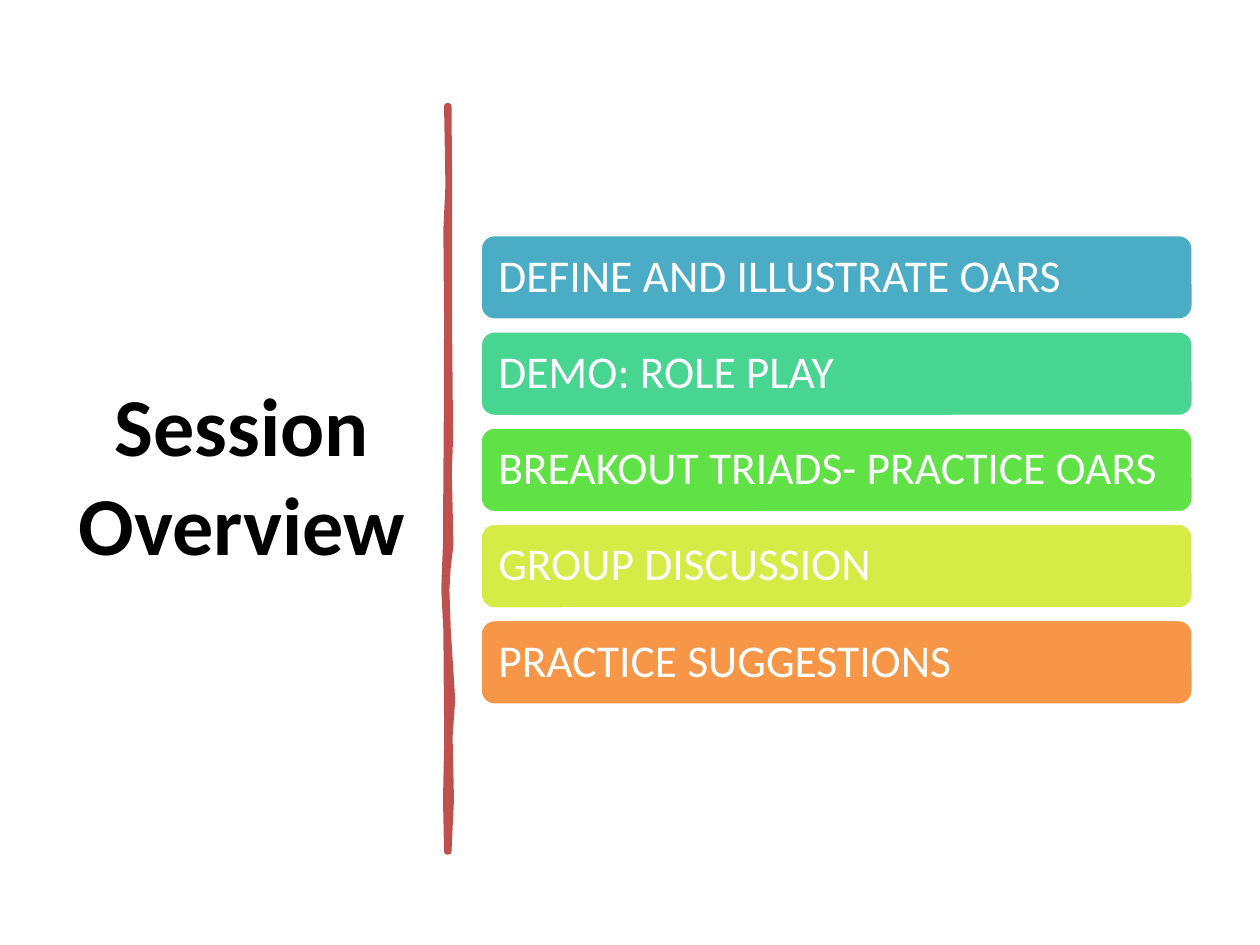
from lxml import etree
from pptx import Presentation
from pptx.dml.color import RGBColor
from pptx.enum import shapes, text
from pptx.oxml import ns
from pptx.util import Pt

FONT = "Calibri"
COLORS = {
    "title": "000000",
    "divider": "C0504D",
    "white": "FFFFFF",
    "blue": "4BACC6",
    "teal": "48D491",
    "green": "60E146",
    "lime": "D5EC46",
    "orange": "F79646",
}
AGENDA = [
    ("DEFINE AND ILLUSTRATE OARS", "blue"),
    ("DEMO: ROLE PLAY", "teal"),
    ("BREAKOUT TRIADS- PRACTICE OARS", "green"),
    ("GROUP DISCUSSION", "lime"),
    ("PRACTICE SUGGESTIONS", "orange"),
]
BAR_LEFT, BAR_TOP, BAR_WIDTH, BAR_HEIGHT, BAR_STEP = 274.4, 134, 407.5, 49, 55
DIVIDER_EDGES = [
    (60.5, 255.4, 256.4),
    (106, 256.2, 256.8),
    (131, 255, 256.8),
    (183, 255.4, 256.7),
    (250, 255.2, 257.3),
    (270, 255, 256.6),
    (311, 254.8, 257.5),
    (325, 254.2, 255.9),
    (337, 253.8, 255.2),
    (360, 255, 256),
    (400, 255.3, 258.5),
    (421, 255.5, 257),
    (457, 254.8, 257.8),
    (486.7, 255.4, 256.4),
]


def color(name):
    return RGBColor.from_string(COLORS[name])


def paint(shape, fill, line, width):
    shape.shadow.inherit = False
    shape.fill.solid()
    shape.fill.fore_color.rgb = color(fill)
    shape.line.color.rgb = color(line)
    shape.line.width = Pt(width)


def write(box, words, size, ink, align, bold=False):
    frame = box.text_frame
    frame.text = words
    frame.word_wrap = True
    frame.auto_size = text.MSO_AUTO_SIZE.NONE
    frame.vertical_anchor = text.MSO_ANCHOR.MIDDLE
    para = frame.paragraphs[0]
    para.alignment = align
    for span in para.runs:
        span.font.name = FONT
        span.font.size = Pt(size)
        span.font.bold = bold
        span.font.color.rgb = color(ink)
    return frame


def set_title(page, words):
    title = page.shapes.title
    title.left, title.top = Pt(37.4), Pt(50.4)
    title.width, title.height = Pt(201.6), Pt(440)
    write(title, words, 47, "title", text.PP_ALIGN.CENTER, bold=True)


def add_divider(page):
    right = [(Pt(x), Pt(y)) for y, _, x in DIVIDER_EDGES]
    left = [(Pt(x), Pt(y)) for y, x, _ in reversed(DIVIDER_EDGES)]
    builder = page.shapes.build_freeform(*right[0])
    builder.add_line_segments(right[1:] + left, close=True)
    divider = builder.convert_to_shape()
    paint(divider, "divider", "divider", 3.25)
    etree.SubElement(divider.line._get_or_add_ln(), ns.qn("a:round"))


def add_bar(page, row, words, fill):
    bar = page.shapes.add_shape(
        shapes.MSO_SHAPE.ROUNDED_RECTANGLE,
        Pt(BAR_LEFT), Pt(BAR_TOP + row * BAR_STEP), Pt(BAR_WIDTH), Pt(BAR_HEIGHT),
    )
    paint(bar, fill, "white", 2)
    frame = write(bar, words, 26, "white", text.PP_ALIGN.LEFT)
    frame.margin_left = frame.margin_right = Pt(8)
    frame.margin_top = frame.margin_bottom = Pt(8)
    frame.paragraphs[0].line_spacing = 0.9


def main():
    deck = Presentation()
    deck.slide_width, deck.slide_height = Pt(720), Pt(540)
    page = deck.slides.add_slide(deck.slide_layouts[5])
    set_title(page, "Session Overview")
    add_divider(page)
    for row, (words, fill) in enumerate(AGENDA):
        add_bar(page, row, words, fill)
    deck.save("out.pptx")


if __name__ == "__main__":
    main()
